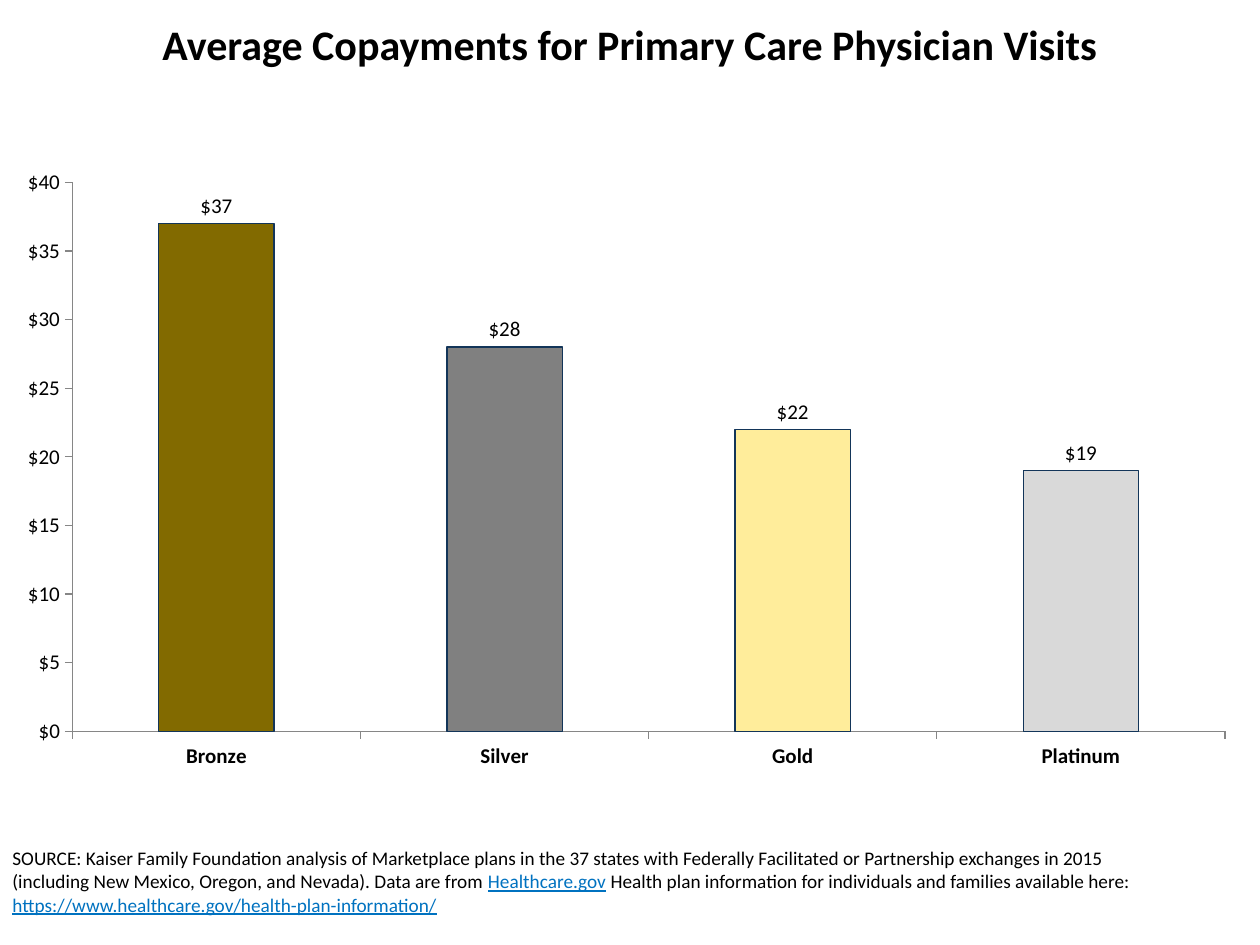
from dataclasses import dataclass

from lxml import etree
from pptx import Presentation
from pptx import util as u
from pptx.chart import data as chart_data
from pptx.dml.color import RGBColor
from pptx.enum import chart as charts, text
from pptx.oxml import ns


@dataclass(frozen=True)
class Theme:
    font: str = "Calibri"
    ink: str = "000000"
    link: str = "0072C0"
    outline: str = "133559"
    axis: str = "868686"
    title_size: int = 24
    chart_size: int = 12
    source_size: int = 11


THEME = Theme()

# Plan level, average copayment, bar colour
COPAYMENTS = [
    ("Bronze", 37, "826A00"),
    ("Silver", 28, "808080"),
    ("Gold", 22, "FFED9B"),
    ("Platinum", 19, "D9D9D9"),
]
SOURCE = [
    ("SOURCE: Kaiser Family Foundation analysis of Marketplace plans in the 37 states "
     "with Federally Facilitated or Partnership exchanges in 2015 (including New Mexico, "
     "Oregon, and Nevada). Data are from ", False),
    ("Healthcare.gov", True),
    (" Health plan information for individuals and families available here: ", False),
    ("https://www.healthcare.gov/health-plan-information/", True),
]
DOLLARS = '"$"#,##0'


def format_font(font, size, color=THEME.ink, bold=False, underline=False):
    font.name = THEME.font
    font.size = u.Pt(size)
    font.bold = bold
    font.underline = underline
    font.color.rgb = RGBColor.from_string(color)


def add_text(para, words, **style):
    span = para.add_run()
    span.text = words
    format_font(span.font, **style)


def place(shape, box):
    shape.left, shape.top, shape.width, shape.height = box


def fill_title(page, box):
    title = page.shapes.title
    place(title, box)
    frame = title.text_frame
    frame.auto_size = text.MSO_AUTO_SIZE.NONE
    frame.vertical_anchor = text.MSO_ANCHOR.TOP
    para = frame.paragraphs[0]
    para.alignment = text.PP_ALIGN.CENTER
    add_text(para, "Average Copayments for Primary Care Physician Visits",
             size=THEME.title_size, bold=True)


def set_plot_layout(chart, x, y, w, h):
    """Fix the inner plot area, in fractions of the chart's size."""
    plot_area = chart.element.find(".//" + ns.qn("c:plotArea"))
    layout = plot_area.find(ns.qn("c:layout"))
    if layout is None:
        layout = etree.Element(ns.qn("c:layout"))
        plot_area.insert(0, layout)
    manual = etree.SubElement(layout, ns.qn("c:manualLayout"))
    settings = {"layoutTarget": "inner", "xMode": "edge", "yMode": "edge",
                "x": x, "y": y, "w": w, "h": h}
    for name, value in settings.items():
        etree.SubElement(manual, ns.qn("c:" + name), val=str(value))


def format_axis(axis, bold=False):
    axis.has_major_gridlines = False
    axis.major_tick_mark = charts.XL_TICK_MARK.OUTSIDE
    axis.minor_tick_mark = charts.XL_TICK_MARK.NONE
    axis.format.line.color.rgb = RGBColor.from_string(THEME.axis)
    axis.format.line.width = u.Pt(0.75)
    format_font(axis.tick_labels.font, THEME.chart_size, bold=bold)


def format_bar(bar, color):
    bar.format.fill.solid()
    bar.format.fill.fore_color.rgb = RGBColor.from_string(color)
    bar.format.line.color.rgb = RGBColor.from_string(THEME.outline)
    bar.format.line.width = u.Pt(0.75)


def add_copayment_chart(page, box):
    levels, amounts, colors = zip(*COPAYMENTS)
    data = chart_data.CategoryChartData(number_format=DOLLARS)
    data.categories = levels
    data.add_series("Series 1", amounts)
    chart = page.shapes.add_chart(charts.XL_CHART_TYPE.COLUMN_CLUSTERED, *box, data).chart
    chart.has_title = False
    chart.has_legend = False
    format_font(chart.font, THEME.chart_size)
    set_plot_layout(chart, x=0.055, y=0.04, w=0.925, h=0.88)

    format_axis(chart.category_axis, bold=True)
    values = chart.value_axis
    format_axis(values)
    values.minimum_scale, values.maximum_scale, values.major_unit = 0, 40, 5
    values.tick_labels.number_format = DOLLARS
    values.tick_labels.number_format_is_linked = False

    plot = chart.plots[0]
    plot.gap_width = 150
    plot.vary_by_categories = False
    series = plot.series[0]
    format_bar(series, THEME.outline)
    for index, color in enumerate(colors):
        format_bar(series.points[index], color)
    labels = series.data_labels
    labels.show_value = True
    labels.number_format = DOLLARS
    labels.number_format_is_linked = False
    labels.position = charts.XL_LABEL_POSITION.OUTSIDE_END
    format_font(labels.font, THEME.chart_size)


def add_source(page, box):
    frame = page.shapes.add_textbox(*box).text_frame
    frame.word_wrap = True
    for words, is_link in SOURCE:
        add_text(frame.paragraphs[0], words, size=THEME.source_size,
                 color=THEME.link if is_link else THEME.ink, underline=is_link)


def inches(*lengths):
    return [u.Inches(length) for length in lengths]


def main():
    deck = Presentation()
    deck.slide_width, deck.slide_height = inches(10, 7.5)
    page = deck.slides.add_slide(deck.slide_layouts.get_by_name("Title Only"))
    add_source(page, inches(0, 6.67, 9.25, 0.84))
    fill_title(page, inches(0.1, 0.1, 9.8, 1))
    add_copayment_chart(page, inches(0.03, 1.25, 9.89, 4.95))
    deck.save("out.pptx")


if __name__ == "__main__":
    main()
